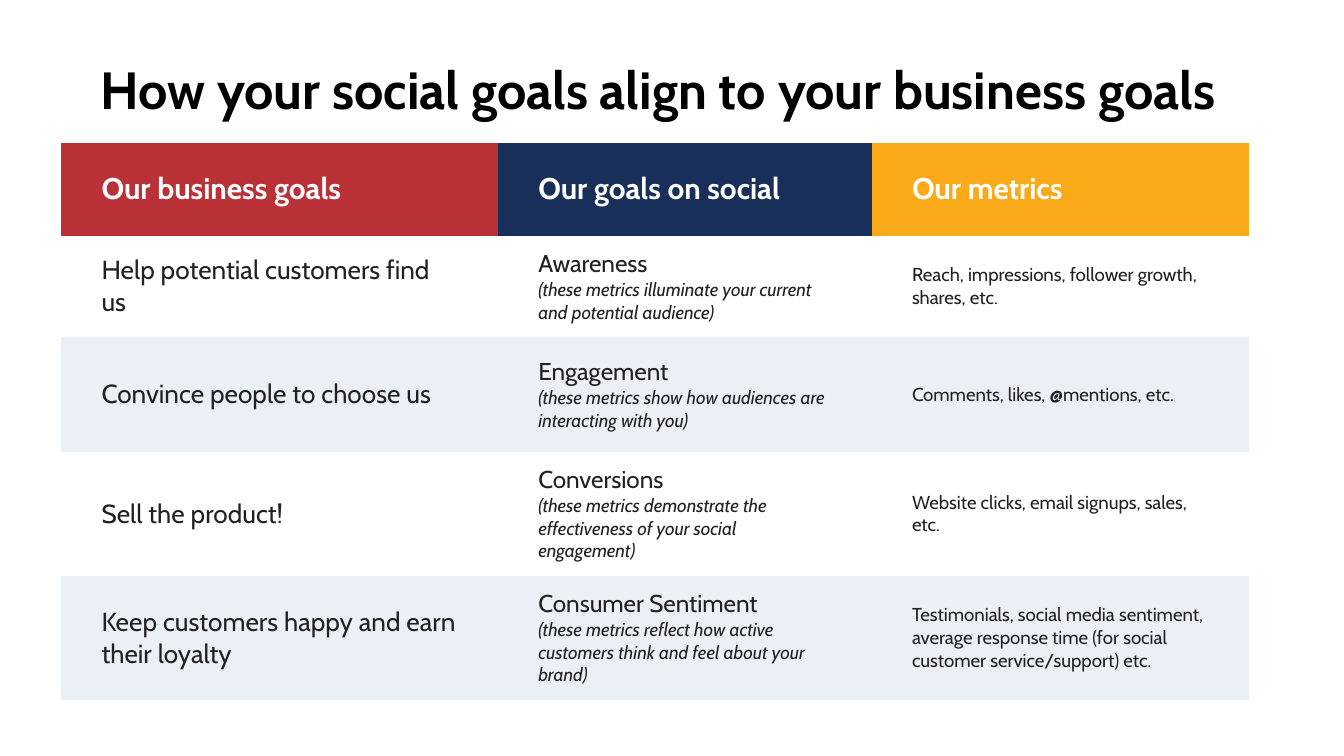
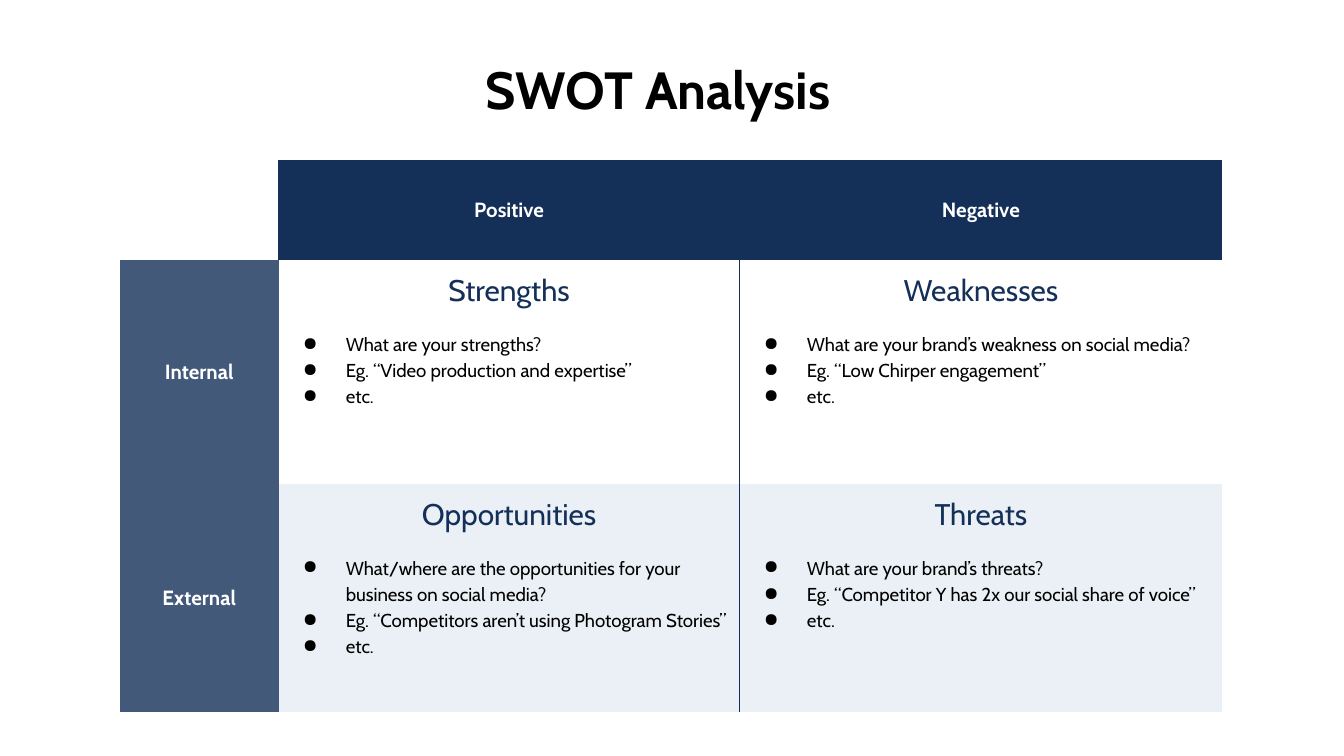
"""Build two slides: social goals against business goals, and a SWOT analysis."""
import copy

import pptx
import pptx.dml.color
import pptx.enum.text
import pptx.oxml
import pptx.oxml.ns
import pptx.util
from lxml import etree

Pt = pptx.util.Pt
RGBColor = pptx.dml.color.RGBColor
qn = pptx.oxml.ns.qn
CENTER = pptx.enum.text.PP_ALIGN.CENTER
MIDDLE = pptx.enum.text.MSO_ANCHOR.MIDDLE

FONT = "Cabin"
NO_STYLE = "{2D5ABB26-0587-4C30-8999-92F81FD0307C}"
BLACK = RGBColor(0x00, 0x00, 0x00)
WHITE = RGBColor(0xFF, 0xFF, 0xFF)
INK = RGBColor(0x21, 0x21, 0x21)
RED = RGBColor(0xBA, 0x31, 0x38)
BLUE = RGBColor(0x18, 0x30, 0x59)
AMBER = RGBColor(0xFA, 0xAA, 0x19)
NAVY = RGBColor(0x14, 0x30, 0x59)
SLATE = RGBColor(0x43, 0x59, 0x7A)
PALE = RGBColor(0xEA, 0xF0, 0xF5)

GOALS_TITLE = "How your social goals align to your business goals"
GOALS_COLUMNS = [234, 200.2, 202.3]
GOALS_ROWS = [49.7, 54.5, 61.4, 66.4, 66.4]
GOALS_HEADINGS = [("Our business goals", RED), ("Our goals on social", BLUE), ("Our metrics", AMBER)]
GOALS = [
    ("Help potential customers find us", "Awareness",
     "(these metrics illuminate your current \vand potential audience)",
     "Reach, impressions, follower growth, shares, etc."),
    ("Convince people to choose us", "Engagement ",
     "(these metrics show how audiences are interacting with you)",
     "Comments, likes, @mentions, etc."),
    ("Sell the product!", "Conversions ",
     "(these metrics demonstrate the effectiveness of your social engagement)",
     "Website clicks, email signups, sales, etc."),
    ("Keep customers happy and earn their loyalty", "Consumer Sentiment ",
     "(these metrics reflect how active customers think and feel about your brand)",
     "Testimonials, social media sentiment, average response time "
     "(for social customer service/support) etc."),
]

SWOT_TITLE = "SWOT Analysis"
SWOT_COLUMNS = [85, 247, 258.5]
SWOT_ROWS = [53.5, 120, 122.5]
SWOT_HEADINGS = ["Positive", "Negative"]
SWOT = [
    ("Internal", WHITE, [
        ("Strengths", ["What are your strengths?", "Eg. “Video production and expertise”", "etc."]),
        ("Weaknesses", ["What are your brand’s weakness on social media?",
                        "Eg. “Low Chirper engagement”", "etc."]),
    ]),
    ("External", PALE, [
        ("Opportunities", ["What/where are the opportunities for your business on social media?",
                           "Eg. “Competitors aren’t using Photogram Stories”", "etc."]),
        ("Threats", ["What are your brand’s threats?",
                     "Eg. “Competitor Y has 2x our social share of voice”", "etc."]),
    ]),
]


def format_span(span, size, color, bold=False, italic=False):
    span.font.name = FONT
    span.font.size = Pt(size)
    span.font.color.rgb = color
    span.font.bold = bold
    span.font.italic = italic


def write(para, text, size, color, bold=False):
    para.text = text
    for span in para.runs:
        format_span(span, size, color, bold)


def add_slide(deck, title):
    page = deck.slides.add_slide(deck.slide_layouts[6])
    box = page.shapes.add_textbox(Pt(29.5), Pt(27.4), Pt(645.8), Pt(49.7))
    frame = box.text_frame
    frame.word_wrap = True
    frame.margin_left = frame.margin_right = frame.margin_top = frame.margin_bottom = Pt(7.2)
    para = frame.paragraphs[0]
    para.alignment = CENTER
    para.line_spacing = 0.9
    write(para, title, 28, BLACK, True)
    return page


def add_grid(page, left, top, columns, rows, side_margin):
    frame = page.shapes.add_table(len(rows), len(columns), Pt(left), Pt(top),
                                  Pt(sum(columns)), Pt(sum(rows)))
    table = frame.table
    table.first_row = table.horz_banding = False
    table._tbl.tblPr.find(qn("a:tableStyleId")).text = NO_STYLE
    for column, width in zip(table.columns, columns):
        column.width = Pt(width)
    for row, height in zip(table.rows, rows):
        row.height = Pt(height)
    for cell in table.iter_cells():
        cell.margin_left = cell.margin_right = Pt(side_margin)
        cell.margin_top = cell.margin_bottom = Pt(7.2)
        cell.vertical_anchor = MIDDLE
        cell.fill.background()
    return table


def paint(cell, color):
    cell.fill.solid()
    cell.fill.fore_color.rgb = color


def add_heading(cell, text, size, color, alignment=None):
    paint(cell, color)
    para = cell.text_frame.paragraphs[0]
    para.alignment = alignment
    write(para, text, size, WHITE, True)


def add_border(cell, side, color):
    line = etree.Element(qn("a:ln" + side), w=str(Pt(0.75)))
    fill = etree.SubElement(line, qn("a:solidFill"))
    etree.SubElement(fill, qn("a:srgbClr"), val=str(color))
    cell._tc.get_or_add_tcPr().insert(0, line)


def write_social_goal(para, name, detail):
    para.text = name + "\v" + detail
    for index, span in enumerate(para.runs):
        format_span(span, 10 if index else 13, INK, italic=index > 0)
    for line_break in para._p.findall(qn("a:br")):
        line_break.append(copy.deepcopy(line_break.getprevious().find(qn("a:rPr"))))


def add_bullet(para):
    para.line_spacing = 1.15
    properties = para._p.get_or_add_pPr()
    properties.set("marL", str(Pt(28.8)))
    properties.set("indent", str(Pt(-23)))
    color = etree.SubElement(properties, qn("a:buClr"))
    etree.SubElement(color, qn("a:srgbClr"), val=str(BLACK))
    etree.SubElement(properties, qn("a:buChar"), char="●")


def fill_quadrant(cell, name, points, color):
    paint(cell, color)
    cell.vertical_anchor = pptx.enum.text.MSO_ANCHOR.TOP
    para = cell.text_frame.paragraphs[0]
    para.alignment = CENTER
    para.space_after = Pt(11)
    write(para, name, 16, NAVY)
    for point in points:
        para = cell.text_frame.add_paragraph()
        add_bullet(para)
        write(para, point, 10, BLACK)


def build_goals(deck):
    page = add_slide(deck, GOALS_TITLE)
    table = add_grid(page, 32.8, 76.5, GOALS_COLUMNS, GOALS_ROWS, 21.6)
    for column, (heading, color) in enumerate(GOALS_HEADINGS):
        add_heading(table.cell(0, column), heading, 16, color)
    for row, (business, social, detail, metrics) in enumerate(GOALS, 1):
        cells = [table.cell(row, column) for column in range(3)]
        paras = [cell.text_frame.paragraphs[0] for cell in cells]
        write(paras[0], business, 14, INK)
        write_social_goal(paras[1], social, detail)
        write(paras[2], metrics, 10, INK)
        if row % 2 == 0:
            for cell in cells:
                paint(cell, PALE)


def build_swot(deck):
    page = add_slide(deck, SWOT_TITLE)
    table = add_grid(page, 64.3, 85.7, SWOT_COLUMNS, SWOT_ROWS, 7.2)
    for column, heading in enumerate(SWOT_HEADINGS, 1):
        add_heading(table.cell(0, column), heading, 11, NAVY, CENTER)
    for row, (heading, color, quadrants) in enumerate(SWOT, 1):
        add_heading(table.cell(row, 0), heading, 11, SLATE, CENTER)
        for column, (name, points) in enumerate(quadrants, 1):
            fill_quadrant(table.cell(row, column), name, points, color)
    for row in range(len(SWOT_ROWS)):
        for column in (1, 0):
            color = SLATE if row and column == 0 else NAVY
            add_border(table.cell(row, column), "R", color)
            add_border(table.cell(row, column + 1), "L", color)


def main():
    deck = pptx.Presentation()
    deck.slide_width, deck.slide_height = Pt(720), Pt(405)
    build_goals(deck)
    build_swot(deck)
    deck.save("out.pptx")


if __name__ == "__main__":
    main()
